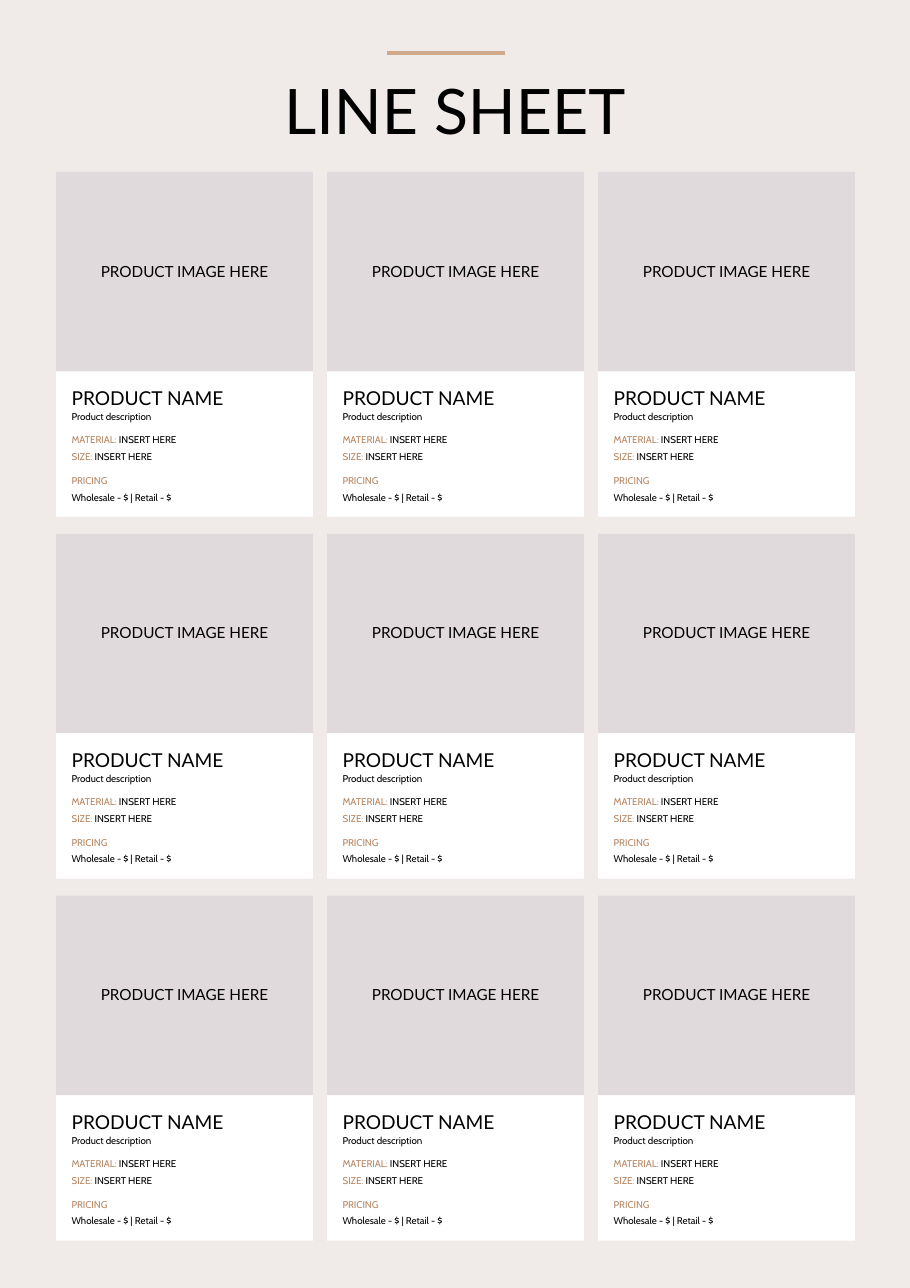
from dataclasses import dataclass

import lxml.etree
import pptx
import pptx.dml.color
import pptx.enum.shapes
import pptx.enum.text
import pptx.oxml.ns
import pptx.shapes.autoshape
import pptx.slide
import pptx.text.text
import pptx.util

Inches = pptx.util.Inches
Pt = pptx.util.Pt
Align = pptx.enum.text.PP_ALIGN


@dataclass(frozen=True)
class TextStyle:
    font: str
    size: float
    leading: float
    align: Align = Align.LEFT


@dataclass(frozen=True)
class Theme:
    page: str = "F0EBE9"
    photo: str = "E0DADC"
    panel: str = "FFFFFF"
    ink: str = "000000"
    accent: str = "B68763"
    rule: str = "D0A88A"
    title: TextStyle = TextStyle("Lato", 41, 38.6, Align.CENTER)
    photo_label: TextStyle = TextStyle("Lato", 10, 14, Align.CENTER)
    name: TextStyle = TextStyle("Lato", 12.5, 17.5)
    detail: TextStyle = TextStyle("Cabin", 6.4, 9)


THEME = Theme()


@dataclass(frozen=True)
class Phrase:
    """A piece of a line in one colour."""
    text: str
    color: str = THEME.ink


@dataclass(frozen=True)
class CardLine:
    """A line of text, placed from the top of its card."""
    offset: float
    height: float
    phrases: tuple[Phrase, ...]
    style: TextStyle = THEME.detail


CARD_LINES = (
    CardLine(1.91, 0.24, (Phrase("PRODUCT NAME"),), THEME.name),
    CardLine(2.15, 0.13, (Phrase("Product description"),)),
    CardLine(2.36, 0.13, (Phrase("MATERIAL: ", THEME.accent), Phrase("INSERT HERE"))),
    CardLine(2.51, 0.13, (Phrase("SIZE: ", THEME.accent), Phrase("INSERT HERE"))),
    CardLine(2.73, 0.13, (Phrase("PRICING", THEME.accent),)),
    CardLine(2.88, 0.13, (Phrase("Wholesale - $ | Retail - $"),)),
)

PAGE_WIDTH, PAGE_HEIGHT = 8.26, 11.69
ROWS, COLUMNS = 3, 3
GRID_LEFT, GRID_TOP, GRID_RIGHT, GRID_BOTTOM = 0.51, 1.56, 7.76, 11.26
CARD_WIDTH, PHOTO_HEIGHT, PANEL_HEIGHT = 2.33, 1.81, 1.32
CARD_HEIGHT = PHOTO_HEIGHT + PANEL_HEIGHT
COLUMN_STEP = (GRID_RIGHT - GRID_LEFT - CARD_WIDTH) / (COLUMNS - 1)
ROW_STEP = (GRID_BOTTOM - GRID_TOP - CARD_HEIGHT) / (ROWS - 1)
TEXT_INDENT, TEXT_WIDTH = 0.14, 2.04


def rgb(color: str) -> pptx.dml.color.RGBColor:
    return pptx.dml.color.RGBColor.from_string(color)


def write(frame: pptx.text.text.TextFrame, phrases: tuple[Phrase, ...],
          style: TextStyle) -> None:
    frame.word_wrap = True
    line = frame.paragraphs[0]
    line.alignment = style.align
    line.line_spacing = Pt(style.leading)
    for phrase in phrases:
        run = line.add_run()
        run.text = phrase.text
        run.font.name = style.font
        run.font.size = Pt(style.size)
        run.font.color.rgb = rgb(phrase.color)


def add_text(slide: pptx.slide.Slide, left: float, top: float, width: float, height: float,
             phrases: tuple[Phrase, ...], style: TextStyle) -> None:
    frame = slide.shapes.add_textbox(
        Inches(left), Inches(top), Inches(width), Inches(height)).text_frame
    frame.margin_left = frame.margin_top = frame.margin_right = frame.margin_bottom = 0
    write(frame, phrases, style)
    frame.auto_size = pptx.enum.text.MSO_AUTO_SIZE.SHAPE_TO_FIT_TEXT


def add_block(slide: pptx.slide.Slide, left: float, top: float, height: float,
              color: str) -> pptx.shapes.autoshape.Shape:
    block = slide.shapes.add_shape(
        pptx.enum.shapes.MSO_SHAPE.RECTANGLE,
        Inches(left), Inches(top), Inches(CARD_WIDTH), Inches(height))
    block.shadow.inherit = False
    block.fill.solid()
    block.fill.fore_color.rgb = rgb(color)
    block.line.fill.background()
    return block


def add_card(slide: pptx.slide.Slide, left: float, top: float) -> None:
    # Details panel
    add_block(slide, left, top + PHOTO_HEIGHT, PANEL_HEIGHT, THEME.panel)
    for line in CARD_LINES:
        add_text(slide, left + TEXT_INDENT, top + line.offset, TEXT_WIDTH, line.height,
                 line.phrases, line.style)

    # Photo area, its label slightly above the middle
    photo = add_block(slide, left, top, PHOTO_HEIGHT, THEME.photo)
    frame = photo.text_frame
    frame.margin_left = frame.margin_top = frame.margin_right = Inches(0.06)
    frame.margin_bottom = Inches(0.1)
    frame.vertical_anchor = pptx.enum.text.MSO_ANCHOR.MIDDLE
    write(frame, (Phrase("PRODUCT IMAGE HERE"),), THEME.photo_label)


def add_header(slide: pptx.slide.Slide) -> None:
    add_text(slide, 0.96, 0.8, 6.34, 0.58, (Phrase("LINE SHEET"),), THEME.title)
    rule = slide.shapes.add_connector(
        pptx.enum.shapes.MSO_CONNECTOR.STRAIGHT,
        Inches(3.51), Inches(0.48), Inches(4.58), Inches(0.48))
    rule.line.color.rgb = rgb(THEME.rule)
    rule.line.width = Pt(2.25)
    lxml.etree.SubElement(rule._element.spPr, pptx.oxml.ns.qn("a:effectLst"))


def main() -> None:
    deck = pptx.Presentation()
    deck.slide_width, deck.slide_height = Inches(PAGE_WIDTH), Inches(PAGE_HEIGHT)
    slide = deck.slides.add_slide(deck.slide_layouts[6])
    slide.background.fill.solid()
    slide.background.fill.fore_color.rgb = rgb(THEME.page)

    # Title with the rule above it
    add_header(slide)

    # Grid of product cards
    for row in range(ROWS):
        for column in range(COLUMNS):
            add_card(slide, GRID_LEFT + column * COLUMN_STEP, GRID_TOP + row * ROW_STEP)

    deck.save("out.pptx")


if __name__ == "__main__":
    main()
